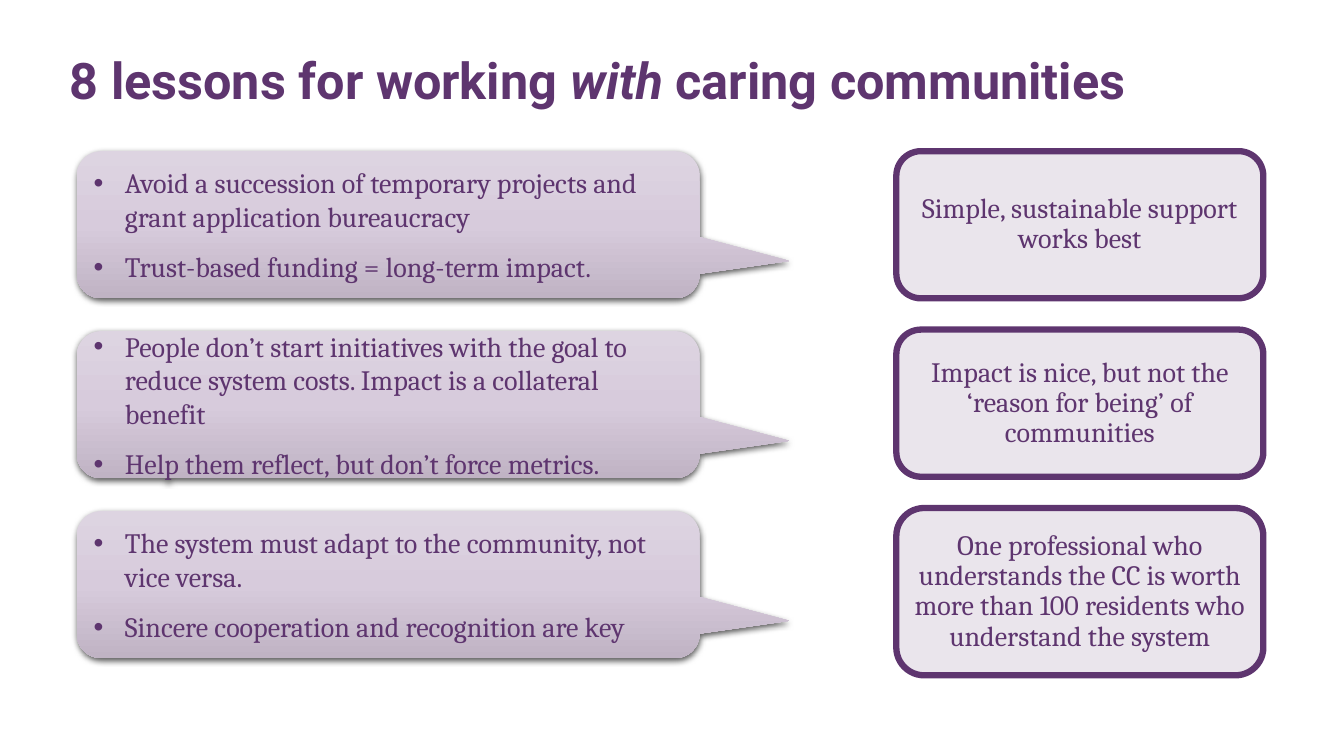
from pptx import Presentation
from pptx.dml.color import RGBColor
from pptx.enum import shapes, text
from pptx.oxml import ns
from pptx.oxml.xmlchemy import OxmlElement
from pptx.util import Inches, Pt

# Content
TITLE = [("8 lessons for working ", False), ("with", True), (" caring communities", False)]
LESSONS = [
    {"advice": ["Avoid a succession of temporary projects and grant application bureaucracy",
                "Trust-based funding = long-term impact."],
     "summary": "Simple, sustainable support works best",
     "summary_height": 1.46},
    {"advice": ["People don’t start initiatives with the goal to reduce system costs. "
                "Impact is a collateral benefit",
                "Help them reflect, but don’t force metrics."],
     "summary": "Impact is nice, but not the ‘reason for being’ of communities",
     "summary_height": 1.46},
    {"advice": ["The system must adapt to the community, not vice versa.",
                "Sincere cooperation and recognition are key"],
     "summary": "One professional who understands the CC is worth more than 100 residents "
                "who understand the system",
     "summary_height": 1.66},
]

# Format
COLORS = {"purple": "5E356F", "lilac": "D7CCDB", "shadow": "000000"}
GRADIENT = [(0, "DDD4E1"), (50, "D7CBDC"), (100, "C0B3C4")]
TITLE_FONT = {"name": "Roboto", "size": Pt(36), "bold": True}
BODY_FONT = {"name": "Cambria", "size": Pt(20)}
MARGINS = ("margin_left", "margin_top", "margin_right", "margin_bottom")
TITLE_FRAME = {"word_wrap": True, "auto_size": text.MSO_AUTO_SIZE.NONE,
               "vertical_anchor": text.MSO_ANCHOR.TOP, **dict.fromkeys(MARGINS, 0)}
ADVICE_FRAME = {"word_wrap": True, "vertical_anchor": text.MSO_ANCHOR.MIDDLE}
SUMMARY_FRAME = {**ADVICE_FRAME, **dict.fromkeys(MARGINS, Inches(0.07))}
TOP, ADVICE_PITCH, SUMMARY_PITCH = 1.5, 1.785, 1.77


def apply(target, values):
    for name, value in values.items():
        setattr(target, name, value)


def style_font(font, values):
    apply(font, values)
    font.color.rgb = RGBColor.from_string(COLORS["purple"])


def add_xml(parent, tag, **attributes):
    child = OxmlElement(tag)
    for name, value in attributes.items():
        child.set(name, str(value))
    parent.append(child)
    return child


def add_box(slide, kind, left, top, width, height):
    box = slide.shapes.add_shape(kind, *map(Inches, (left, top, width, height)))
    box.shadow.inherit = False
    return box


def add_summary(slide, top, height, words):
    summary = add_box(slide, shapes.MSO_SHAPE.ROUNDED_RECTANGLE, 8.89, top, 3.64, height)
    summary.fill.solid()
    summary.fill.fore_color.rgb = RGBColor.from_string(COLORS["lilac"])
    tint = summary._element.spPr.find(".//" + ns.qn("a:srgbClr"))
    add_xml(tint, "a:alpha", val=50000)
    summary.line.color.rgb = RGBColor.from_string(COLORS["purple"])
    summary.line.width = Pt(4.5)

    apply(summary.text_frame, SUMMARY_FRAME)
    sentence = summary.text_frame.paragraphs[0]
    sentence.text = words
    apply(sentence, {"alignment": text.PP_ALIGN.CENTER, "line_spacing": 0.9})
    style_font(sentence.font, BODY_FONT)


def add_advice(slide, top, points):
    advice = add_box(slide, shapes.MSO_SHAPE.ROUNDED_RECTANGULAR_CALLOUT, 0.76, top, 6.18, 1.46)
    for index, value in enumerate((0.644, 0.246, 0.167)):
        advice.adjustments[index] = value
    advice.line.fill.background()

    # Gradient from top to bottom
    advice.fill.gradient()
    advice.fill.gradient_angle = 270
    properties = advice._element.spPr
    stops = properties.find(".//" + ns.qn("a:gsLst"))
    for stop in list(stops):
        stops.remove(stop)
    for position, color in GRADIENT:
        add_xml(add_xml(stops, "a:gs", pos=position * 1000), "a:srgbClr", val=color)

    # Soft shadow below
    shadow = add_xml(properties.find(ns.qn("a:effectLst")), "a:outerShdw", blurRad=Pt(4.5),
                     dist=Pt(1.5), dir=5400000, rotWithShape=0)
    add_xml(add_xml(shadow, "a:srgbClr", val=COLORS["shadow"]), "a:alpha", val=63000)

    # Bulleted points
    frame = advice.text_frame
    apply(frame, ADVICE_FRAME)
    for index, words in enumerate(points):
        point = frame.add_paragraph() if index else frame.paragraphs[0]
        point.text = words
        point.alignment = text.PP_ALIGN.LEFT
        if index:
            point.space_before = Pt(12)
        layout = point._p.get_or_add_pPr()
        layout.set("marL", str(Inches(0.31)))
        layout.set("indent", str(-Inches(0.31)))
        add_xml(layout, "a:buFont", typeface="Arial")
        add_xml(layout, "a:buChar", char="•")
        style_font(point.font, BODY_FONT)


def main():
    deck = Presentation()
    deck.slide_width, deck.slide_height = Inches(13.33), Inches(7.5)
    slide = deck.slides.add_slide(deck.slide_layouts[5])

    # Title
    title = slide.shapes.title
    apply(title, {"left": Inches(0.69), "top": Inches(0.49),
                  "width": Inches(11.88), "height": Inches(1.38)})
    apply(title.text_frame, TITLE_FRAME)
    heading = title.text_frame.paragraphs[0]
    heading.alignment = text.PP_ALIGN.LEFT
    for words, italic in TITLE:
        part = heading.add_run()
        part.text = words
        style_font(part.font, {**TITLE_FONT, "italic": italic})

    # Lessons: advice on the left, summary on the right
    for row, lesson in enumerate(LESSONS):
        add_summary(slide, TOP + row * SUMMARY_PITCH, lesson["summary_height"], lesson["summary"])
        add_advice(slide, TOP + row * ADVICE_PITCH, lesson["advice"])

    deck.save("out.pptx")


if __name__ == "__main__":
    main()
